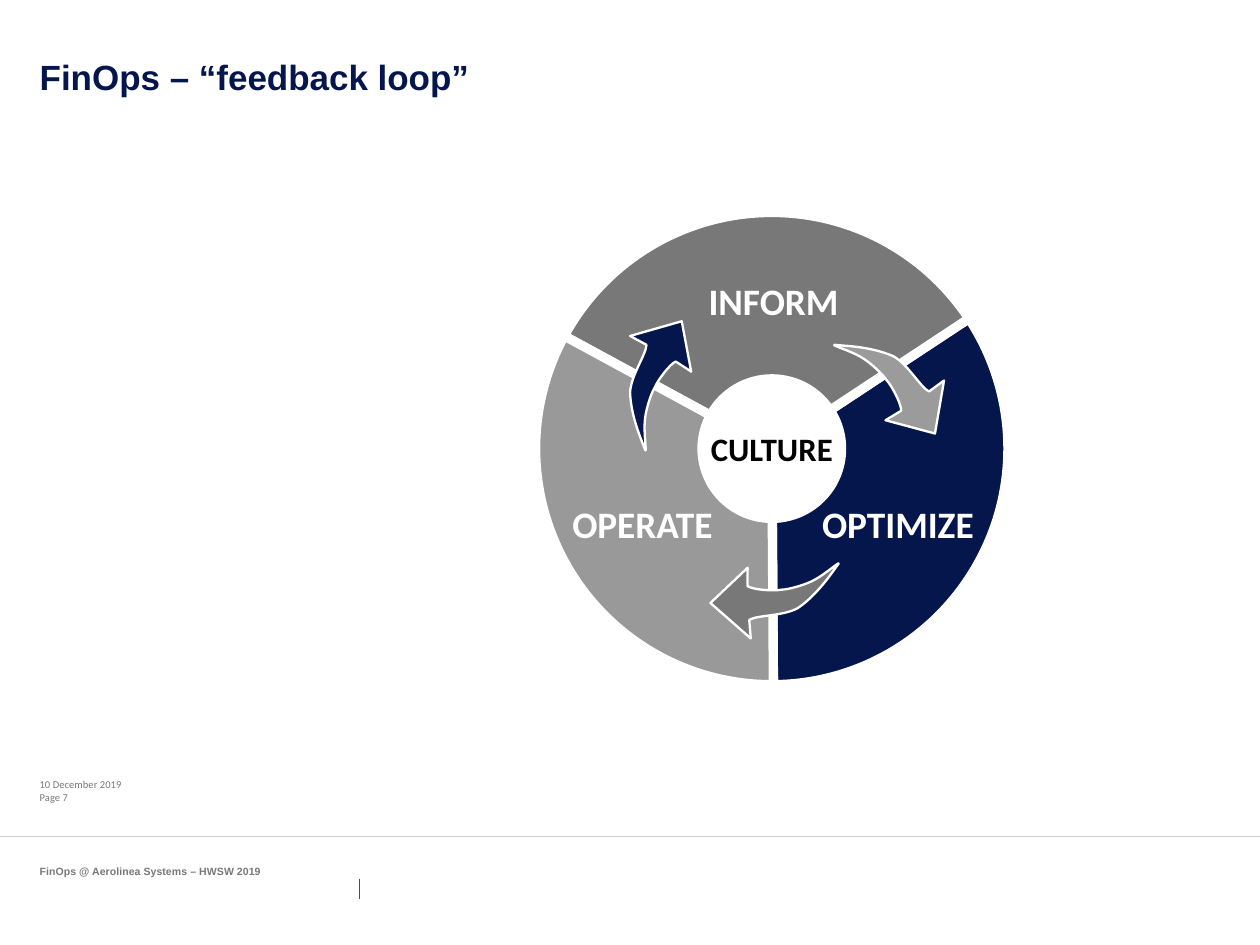
from math import cos, radians, sin

from lxml.etree import SubElement
from pptx import Presentation
from pptx.dml.color import RGBColor
from pptx.enum.shapes import MSO_CONNECTOR, MSO_SHAPE
from pptx.enum.text import MSO_ANCHOR, PP_ALIGN
from pptx.oxml.ns import qn
from pptx.util import Pt

NAVY = RGBColor(0x05, 0x16, 0x4D)
DARK = RGBColor(0x78, 0x78, 0x78)
LIGHT = RGBColor(0x99, 0x99, 0x99)
SILVER = RGBColor(0x9B, 0x9B, 0x9B)
RULE = RGBColor(0xCC, 0xCC, 0xCC)
TICK = RGBColor(0x4D, 0x4D, 0x4D)
WHITE = RGBColor(0xFF, 0xFF, 0xFF)
BLACK = RGBColor(0, 0, 0)

TITLE = "FinOps – “feedback loop”"
# text, box, font, bold, wrap
NOTES = [
    ("10 December 2019", (17, 333.3, 38.2, 5.8), "Calibri", False, False),
    ("FinOps @ Aerolinea Systems – HWSW 2019", (17, 370.4, 127.4, 5.8),
     "Arial", True, True),
    ("Page 7", (17, 338.8, 15.8, 5.8), "Calibri", False, False),
]
# start, end, colour, width
RULES = [
    ((154.1, 376.6), (154.1, 385.2), TICK, 0.5),
    ((0, 358.56), (540, 358.56), RULE, 0.5),
]
HUB = (330.8, 192.3)
OUTER, INNER = 101.2, 29.9
# first angle, last angle, colour: clockwise from the right
WEDGES = [(-33.4, 89.6, NAVY), (208.5, 326.6, DARK), (89.6, 208.5, LIGHT)]
# centre, turn, colour
ARROWS = [
    ((283.3, 166.7), 83.8, NAVY),
    ((378.4, 165.2), 199.4, SILVER),
    ((333.7, 250.2), 321, DARK),
]
# arrow outline around its centre: straight points, then cubic curves
HEAD = [(-6, -13.7), (-27.9, -12), (-24, 10.7), (-19.5, 4.1)]
CURVES = [
    [(-15.3, 4.7), (-7.4, 12), (-0.1, 13.3)],
    [(11.2, 14.2), (23, 9.9), (25.1, 9.6)],
    [(27.5, 8.9), (17.9, 9.4), (13.2, 8.4)],
    [(9, 7.8), (1.5, 4.5), (-0.7, 2.7)],
    [(-4, 0.9), (-10.2, -5), (-11, -7.6)],
]
LABELS = [
    ("CULTURE", (293, 180.4, 75.6, 24.5), 14, BLACK),
    ("INFORM", (293.7, 115.9, 75.6, 26.6), 16, WHITE),
    ("OPTIMIZE", (341.7, 211.3, 86.4, 26.6), 16, WHITE),
    ("OPERATE", (233.3, 211.3, 84.2, 26.6), 16, WHITE),
]


def lay(box):
    return [Pt(v) for v in box]


def write(frame, text, font, size, color, bold):
    run = frame.paragraphs[0].add_run()
    run.text = text
    run.font.name = font
    run.font.size = Pt(size)
    run.font.bold = bold
    run.font.color.rgb = color


def trim(frame):
    """Take away the inner margins."""
    frame.margin_left = frame.margin_right = 0
    frame.margin_top = frame.margin_bottom = 0


def paint(shape, fill, width):
    shape.shadow.inherit = False
    shape.fill.solid()
    shape.fill.fore_color.rgb = fill
    shape.line.color.rgb = WHITE
    shape.line.width = Pt(width)


def disc(kind, radius, fill):
    x, y = HUB
    box = lay((x - radius, y - radius, 2 * radius, 2 * radius))
    shape = shapes.add_shape(kind, *box)
    paint(shape, fill, 4)
    return shape


def turn(point, centre, angle):
    x, y = point
    c, s = cos(radians(angle)), sin(radians(angle))
    return Pt(centre[0] + x * c - y * s), Pt(centre[1] + x * s + y * c)


def curl(shape, first):
    """Join the segments from first on, three by three, into curves."""
    steps = list(shape._element.iter(qn("a:lnTo")))[first:]
    for i in range(0, len(steps), 3):
        curve = steps[i].makeelement(qn("a:cubicBezTo"))
        steps[i].addprevious(curve)
        for step in steps[i:i + 3]:
            curve.append(step[0])
            step.getparent().remove(step)


deck = Presentation()
deck.slide_width, deck.slide_height = Pt(540), Pt(405)
slide = deck.slides.add_slide(deck.slide_layouts[5])
shapes = slide.shapes

for start, end, color, width in RULES:
    line = shapes.add_connector(MSO_CONNECTOR.STRAIGHT, *lay(start + end))
    line.line.color.rgb = color
    line.line.width = Pt(width)
    SubElement(line._element.spPr, qn("a:effectLst"))

title = shapes.title
title.left, title.top, title.width, title.height = lay((17, 23.76, 501.8, 45.4))
frame = title.text_frame
trim(frame)
frame.vertical_anchor = MSO_ANCHOR.TOP
frame.paragraphs[0].alignment = PP_ALIGN.LEFT
write(frame, TITLE, "Arial", 15, NAVY, True)

for text, box, font, bold, wrap in NOTES:
    frame = shapes.add_textbox(*lay(box)).text_frame
    trim(frame)
    frame.word_wrap = wrap
    frame.vertical_anchor = MSO_ANCHOR.MIDDLE
    write(frame, text, font, 4.5, DARK, bold)

for first, last, color in WEDGES:
    wedge = disc(MSO_SHAPE.PIE, OUTER, color)
    # angles count in 60000ths of a degree, adjustments in 100000ths
    wedge.adjustments[0] = first % 360 * 0.6
    wedge.adjustments[1] = last * 0.6
disc(MSO_SHAPE.OVAL, INNER, WHITE)

outline = HEAD + sum(CURVES, [])
for centre, angle, color in ARROWS:
    points = [turn(p, centre, angle) for p in outline]
    pen = shapes.build_freeform(*points[0], scale=1.0)
    pen.add_line_segments(points[1:], close=True)
    arrow = pen.convert_to_shape()
    curl(arrow, len(HEAD) - 1)
    paint(arrow, color, 1)

for text, box, size, color in LABELS:
    frame = shapes.add_textbox(*lay(box)).text_frame
    frame.word_wrap = False
    frame.paragraphs[0].alignment = PP_ALIGN.CENTER
    write(frame, text, "Calibri", size, color, True)

deck.save("out.pptx")
